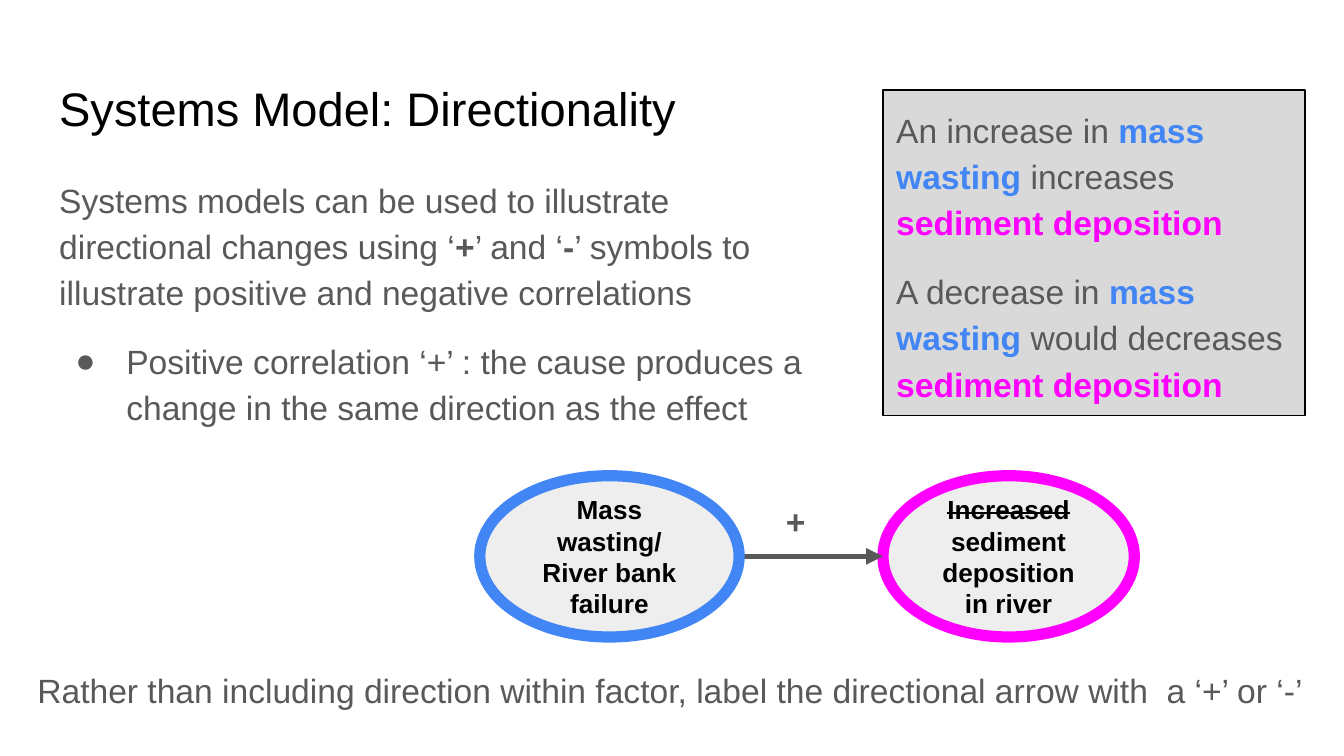
from lxml import etree
from pptx import Presentation
from pptx.dml.color import RGBColor
from pptx.enum.shapes import MSO_CONNECTOR, MSO_SHAPE
from pptx.enum.text import MSO_ANCHOR, MSO_AUTO_SIZE, PP_ALIGN
from pptx.oxml.ns import qn
from pptx.util import Inches, Pt

LEFT, CENTER = PP_ALIGN.LEFT, PP_ALIGN.CENTER
TOP, MIDDLE = MSO_ANCHOR.TOP, MSO_ANCHOR.MIDDLE
RECTANGLE, OVAL = MSO_SHAPE.RECTANGLE, MSO_SHAPE.OVAL
STRAIGHT = MSO_CONNECTOR.STRAIGHT
NO_AUTOFIT = MSO_AUTO_SIZE.NONE

FONT = "Arial"
BLACK, GRAY, PANEL, PALE = "000000", "595959", "D9D9D9", "EEEEEE"
BLUE, PINK = "4285F4", "FF00FF"

# Content: a paragraph is a list of runs (text, differences from the base format)
BOLD = {"bold": True}
CAUSE = {"bold": True, "color": BLUE}
EFFECT = {"bold": True, "color": PINK}

TITLE = [[("Systems Model: Directionality", {})]]
EXPLANATION = [
    [("Systems models can be used to illustrate directional changes using ‘", {}),
     ("+", BOLD), ("’ and ‘", {}), ("-", BOLD),
     ("’ symbols to illustrate positive and negative correlations", {})],
    [("Positive correlation ‘+’ : the cause produces a change in the same "
      "direction as the effect", {})],
]
EXAMPLES = [
    [(opening, {}), (" mass wasting", CAUSE), (verb, {}),
     ("sediment deposition", EFFECT)]
    for opening, verb in [("An increase in", " increases "),
                          ("A decrease in", " would decreases ")]
]
CAUSE_FACTOR = [[("Mass wasting/ River bank failure", {})]]
EFFECT_FACTOR = [[("Increased", {"strike": True}),
                  (" sediment deposition in river", {})]]
SIGN = [[(" +", {})]]
ADVICE = [[("Rather than including direction within factor, label the directional "
            "arrow with  a ‘+’ or ‘-’", {})]]

# Layout in inches
FACTOR_TOP, FACTOR_HEIGHT = 3.54, 1.2
CAUSE_LEFT, CAUSE_WIDTH = 3.57, 1.93
EFFECT_LEFT, EFFECT_WIDTH = 6.57, 1.87


def rgb(color):
    return RGBColor.from_string(color)


def add_bullet(paragraph, color):
    properties = paragraph._p.get_or_add_pPr()
    properties.set("marL", str(Inches(0.5)))
    properties.set("indent", str(Inches(-0.38)))
    bullet_color = etree.SubElement(properties, qn("a:buClr"))
    etree.SubElement(bullet_color, qn("a:srgbClr")).set("val", color)
    etree.SubElement(properties, qn("a:buFont")).set("typeface", FONT)
    etree.SubElement(properties, qn("a:buChar")).set("char", "●")


def remove_bullet(paragraph):
    properties = paragraph._p.get_or_add_pPr()
    properties.set("marL", "0")
    properties.set("indent", "0")
    etree.SubElement(properties, qn("a:buNone"))


def write(shape, paragraphs, size=18, color=GRAY, bold=False, align=LEFT,
          anchor=TOP, spacing=1.0, gap=0, bulleted_from=None):
    frame = shape.text_frame
    frame.word_wrap = True
    frame.auto_size = NO_AUTOFIT
    frame.vertical_anchor = anchor
    frame.margin_left = frame.margin_right = Inches(0.1)
    frame.margin_top = frame.margin_bottom = Inches(0.1)
    for index, runs in enumerate(paragraphs):
        paragraph = frame.add_paragraph() if index else frame.paragraphs[0]
        if bulleted_from is not None and index >= bulleted_from:
            add_bullet(paragraph, color)
        else:
            remove_bullet(paragraph)
        paragraph.alignment = align
        paragraph.line_spacing = spacing
        paragraph.space_before = Pt(gap if index else 0)
        paragraph.space_after = Pt(0)
        for text, changes in runs:
            run = paragraph.add_run()
            run.text = text
            run.font.name = FONT
            run.font.size = Pt(size)
            run.font.bold = changes.get("bold", bold)
            run.font.color.rgb = rgb(changes.get("color", color))
            if changes.get("strike"):
                run._r.get_or_add_rPr().set("strike", "sngStrike")


def place(shape, left, top, width, height):
    shape.left, shape.top = Inches(left), Inches(top)
    shape.width, shape.height = Inches(width), Inches(height)
    return shape


def add_box(slide, kind, bounds, fill, line, line_width):
    box = slide.shapes.add_shape(kind, *map(Inches, bounds))
    box.shadow.inherit = False
    box.fill.solid()
    box.fill.fore_color.rgb = rgb(fill)
    box.line.color.rgb = rgb(line)
    box.line.width = Pt(line_width)
    return box


def add_factor(slide, left, width, paragraphs, color):
    bounds = (left, FACTOR_TOP, width, FACTOR_HEIGHT)
    factor = add_box(slide, OVAL, bounds, PALE, color, 6)
    write(factor, paragraphs, size=14, color=BLACK, bold=True, align=CENTER,
          anchor=MIDDLE)


def add_arrow(slide, start, end, y):
    arrow = slide.shapes.add_connector(
        STRAIGHT, Inches(start), Inches(y), Inches(end), Inches(y))
    arrow.line.color.rgb = rgb(GRAY)
    arrow.line.width = Pt(3)
    outline = arrow._element.spPr.find(qn("a:ln"))
    etree.SubElement(outline, qn("a:tailEnd")).set("type", "triangle")
    etree.SubElement(arrow._element.spPr, qn("a:effectLst"))


def add_label(slide, bounds, paragraphs, **style):
    write(slide.shapes.add_textbox(*map(Inches, bounds)), paragraphs, **style)


def main():
    # Widescreen 16:9
    deck = Presentation()
    deck.slide_width = Inches(10)
    deck.slide_height = Inches(10 * 9 / 16)
    slide = deck.slides.add_slide(deck.slide_layouts[1])

    # Title and explanation
    title = place(slide.shapes.title, 0.34, 0.49, 9.32, 0.63)
    write(title, TITLE, size=25.2, color=BLACK)
    explanation = place(slide.placeholders[1], 0.34, 1.19, 5.92, 3.74)
    write(explanation, EXPLANATION, spacing=1.15, gap=12, bulleted_from=1)

    # Worked examples
    examples = add_box(slide, RECTANGLE, (6.57, 0.67, 3.14, 2.42), PANEL, BLACK, 0.75)
    write(examples, EXAMPLES, spacing=1.15, gap=12)

    # Cause and effect diagram
    add_factor(slide, EFFECT_LEFT, EFFECT_WIDTH, EFFECT_FACTOR, PINK)
    add_arrow(slide, CAUSE_LEFT + CAUSE_WIDTH, EFFECT_LEFT,
              FACTOR_TOP + FACTOR_HEIGHT / 2)
    add_factor(slide, CAUSE_LEFT, CAUSE_WIDTH, CAUSE_FACTOR, BLUE)
    add_label(slide, (5.68, 3.63, 0.52, 0.5), SIGN, bold=True)

    # Closing advice
    add_label(slide, (0.18, 4.84, 9.63, 0.5), ADVICE, spacing=1.15)

    deck.save("out.pptx")


if __name__ == "__main__":
    main()
